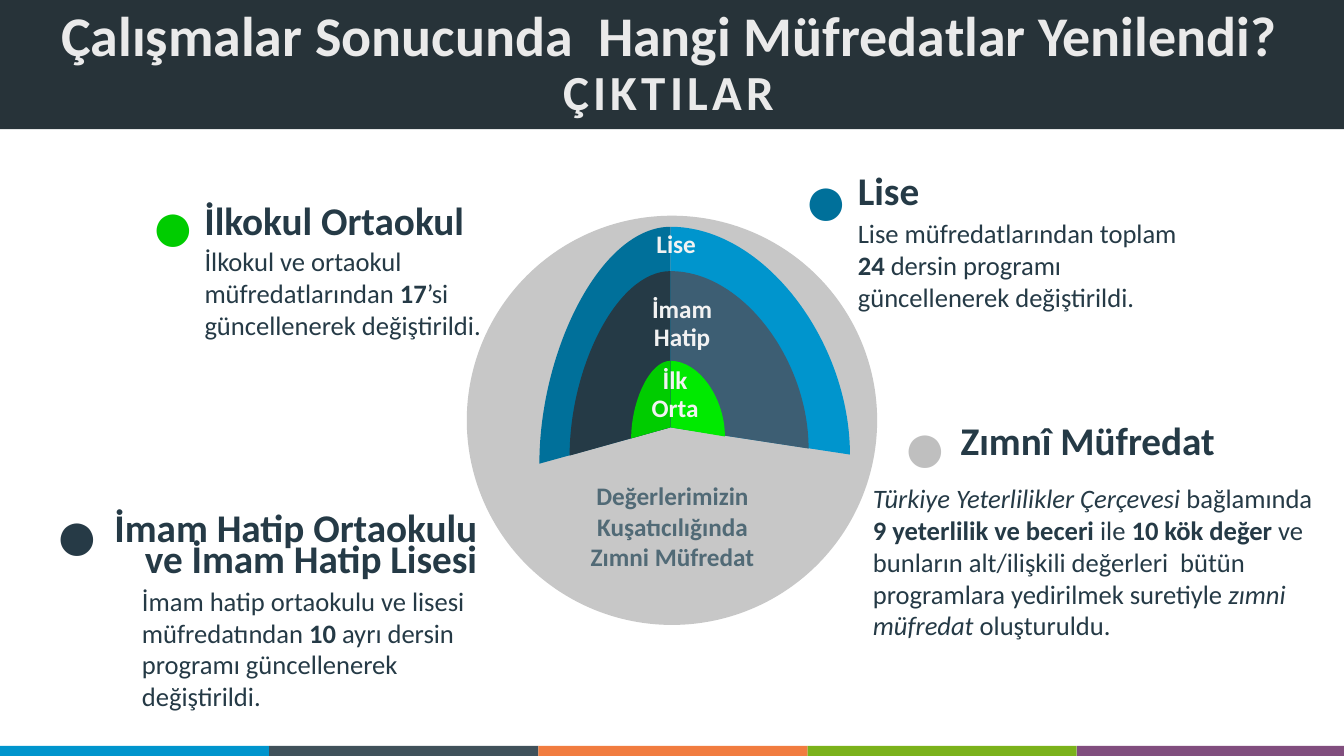
from dataclasses import dataclass

from lxml import etree
from pptx import Presentation
from pptx.dml.color import RGBColor
from pptx.enum import shapes, text
from pptx.oxml import ns
from pptx.util import Inches, Pt


@dataclass(frozen=True)
class Theme:
    font: str = "Calibri"
    dot_font: str = "Arial"
    title: int = 40
    subtitle: int = 35
    heading: int = 28
    body: int = 19
    label: int = 18
    dot: int = 54
    line: float = 22.8
    label_line: int = 8
    banner: str = "273339"
    title_ink: str = "EAEAEA"
    ink: str = "253A46"
    label_ink: str = "F2F2F2"
    hidden_ink: str = "516A76"
    disc: str = "C7C7C7"
    gray: str = "BFBFBF"
    blue: str = "0095CD"
    deep_blue: str = "00709A"
    slate: str = "3D5E73"
    dark_dot: str = "263A46"
    green: str = "00CC00"
    bright_green: str = "00EA00"
    footer: tuple = ("0095CD", "40515A", "F17C3F", "7BB21B", "814E7E")


THEME = Theme()
LEFT, CENTER, RIGHT = text.PP_ALIGN.LEFT, text.PP_ALIGN.CENTER, text.PP_ALIGN.RIGHT
JUSTIFY = text.PP_ALIGN.JUSTIFY
GROW, FIXED = text.MSO_AUTO_SIZE.SHAPE_TO_FIT_TEXT, text.MSO_AUTO_SIZE.NONE
TOP, MIDDLE = text.MSO_ANCHOR.TOP, text.MSO_ANCHOR.MIDDLE
APEX = (6.65, 4.24)  # the point where all the arches meet


def paint(shape, color):
    shape.shadow.inherit = False
    shape.fill.solid()
    shape.fill.fore_color.rgb = RGBColor.from_string(color)
    shape.line.fill.background()


def add_block(slide, kind, box, color):
    paint(slide.shapes.add_shape(kind, *map(Inches, box)), color)


def add_text(slide, box, paragraphs, size, color, align=LEFT, line=None, gap=6,
             bold=False, font=THEME.font, anchor=TOP, fit=GROW):
    """Each paragraph is a list of (text, style); style holds b and/or i."""
    frame = slide.shapes.add_textbox(*map(Inches, box)).text_frame
    frame.word_wrap = True
    frame.auto_size = fit
    frame.vertical_anchor = anchor
    for index, runs in enumerate(paragraphs):
        paragraph = frame.paragraphs[0] if index == 0 else frame.add_paragraph()
        paragraph.alignment = align
        paragraph.space_before = paragraph.space_after = Pt(gap)
        if line:
            paragraph.line_spacing = line
        paragraph.font.name = font
        paragraph.font.size = Pt(size)
        paragraph.font.bold = bold
        paragraph.font.color.rgb = RGBColor.from_string(color)
        for content, style in runs:
            run = paragraph.add_run()
            run.text = content
            if "b" in style:
                run.font.bold = True
            if "i" in style:
                run.font.italic = True
    return frame


def add_topic(slide, dot_box, dot_color, heading_box, heading, body_box, body, align=LEFT):
    add_text(slide, dot_box, [[("●", "")]], THEME.dot, dot_color, JUSTIFY,
             gap=0, font=THEME.dot_font)
    add_text(slide, heading_box, [[(heading, "")]], THEME.heading, THEME.ink,
             align, Pt(THEME.line), bold=True)
    add_text(slide, body_box, [body], THEME.body, THEME.ink, line=Pt(THEME.line))


def add_half_arch(slide, top, foot, handles, color):
    """One curve from the arch top to its foot, closed through the apex."""
    start, *others = [(Inches(x), Inches(y))
                      for x, y in ((APEX[0], top), *handles, foot, APEX)]
    builder = slide.shapes.build_freeform(*start)
    builder.add_line_segments(others, close=True)
    shape = builder.convert_to_shape()
    # The first three segments become the control points of one curve
    segments = list(shape._element.iter(ns.qn("a:lnTo")))[:3]
    curve = etree.Element(ns.qn("a:cubicBezTo"))
    segments[0].addprevious(curve)
    for segment in segments:
        curve.append(segment[0])
        segment.getparent().remove(segment)
    paint(shape, color)


def add_label(slide, box, *lines):
    add_text(slide, box, [[(line, "")] for line in lines], THEME.label,
             THEME.label_ink, CENTER, Pt(THEME.label_line), bold=True)


def add_title(slide, title, subtitle):
    add_block(slide, shapes.MSO_SHAPE.RECTANGLE, (0, -0.01, 13.33, 1.29), THEME.banner)
    frame = add_text(slide, (0, 0.27, 13.27, 0.74), [[(title, "")]], THEME.title,
                     THEME.title_ink, CENTER, 0.9, 0, True, anchor=MIDDLE, fit=FIXED)
    paragraph = frame.paragraphs[0]
    paragraph.add_line_break()
    run = paragraph.add_run()
    run.text = subtitle
    run.font.size = Pt(THEME.subtitle)
    run.font._element.set("spc", "300")


def add_footer(slide):
    for index, color in enumerate(THEME.footer):
        left = index * 2.67
        add_block(slide, shapes.MSO_SHAPE.RECTANGLE,
                  (left, 7.4, min(2.67, 13.33 - left), 0.1), color)


def add_diagram(slide):
    add_block(slide, shapes.MSO_SHAPE.OVAL, (4.63, 2.14, 4.07, 4.06), THEME.disc)
    right_halves = (
        (2.25, (8.43, 4.51), ((7.58, 2.25), (8.43, 3.39)), THEME.blue),
        (2.69, (8.02, 4.45), ((7.37, 2.69), (8.02, 3.58)), THEME.slate),
        (3.58, (7.19, 4.33), ((6.94, 3.58), (7.19, 3.96)), THEME.bright_green),
    )
    left_halves = (
        (2.25, (5.35, 4.6), ((5.96, 2.25), (5.35, 3.48)), THEME.deep_blue),
        (2.69, (5.65, 4.52), ((6.12, 2.69), (5.65, 3.65)), THEME.ink),
        (3.58, (6.26, 4.35), ((6.44, 3.58), (6.26, 3.99)), THEME.green),
    )
    for half in right_halves + left_halves:
        add_half_arch(slide, *half)
    add_label(slide, (6.35, 3.75, 0.69, 0.53), "İlk", "Orta")
    add_label(slide, (5.99, 3.05, 1.55, 0.53), "İmam", "Hatip")
    add_label(slide, (5.96, 2.4, 1.55, 0.25), "Lise ")
    add_text(slide, (5.55, 4.72, 2.24, 1.01),
             [[("Değerlerimizin Kuşatıcılığında Zımni Müfredat", "")]],
             THEME.label, THEME.hidden_ink, CENTER, bold=True)


def main():
    presentation = Presentation()
    presentation.slide_width, presentation.slide_height = Inches(13.33), Inches(7.5)
    slide = presentation.slides.add_slide(presentation.slide_layouts[6])

    # Banner and colour strip
    add_title(slide, "Çalışmalar Sonucunda  Hangi Müfredatlar Yenilendi?", "ÇIKTILAR")
    add_footer(slide)

    # Topics around the diagram
    add_topic(slide, (1.39, 1.71, 0.77, 1.01), THEME.green,
              (1.93, 2.05, 2.94, 0.45), "İlkokul Ortaokul", (1.93, 2.38, 3.21, 1.07),
              [("İlkokul ve ortaokul müfredatlarından ", ""), ("17", "b"),
               ("’si güncellenerek değiştirildi.", "")])
    add_topic(slide, (7.87, 1.45, 0.77, 1.01), THEME.deep_blue,
              (8.41, 1.75, 2.94, 0.45), "Lise", (8.41, 2.1, 3.61, 1.06),
              [("Lise müfredatlarından toplam ", ""), ("24 ", "b"),
               ("dersin programı güncellenerek değiştirildi.", "")])
    add_topic(slide, (0.44, 4.77, 0.77, 1.92), THEME.dark_dot,
              (0.68, 5.09, 4.15, 0.77), "İmam Hatip Ortaokulu ve İmam Hatip Lisesi",
              (1.31, 5.75, 3.68, 1.39),
              [("İmam hatip ortaokulu ve lisesi müfredatından ", ""), ("10 ", "b"),
               ("ayrı dersin programı güncellenerek değiştirildi.", "")], RIGHT)
    add_topic(slide, (8.85, 3.9, 0.77, 1.01), THEME.gray,
              (9.43, 4.23, 2.94, 0.42), "Zımnî Müfredat", (8.56, 4.73, 4.69, 1.71),
              [("Türkiye Yeterlilikler Çerçevesi ", "i"), ("bağlamında ", ""),
               ("9 yeterlilik ve beceri ", "b"), ("ile ", ""), ("10 kök değer ", "b"),
               ("ve bunların alt/ilişkili değerleri  bütün programlara yedirilmek "
                "suretiyle ", ""),
               ("zımni müfredat ", "i"), ("oluşturuldu.", "")])

    # Nested arches on the disc
    add_diagram(slide)
    presentation.save("out.pptx")


if __name__ == "__main__":
    main()
